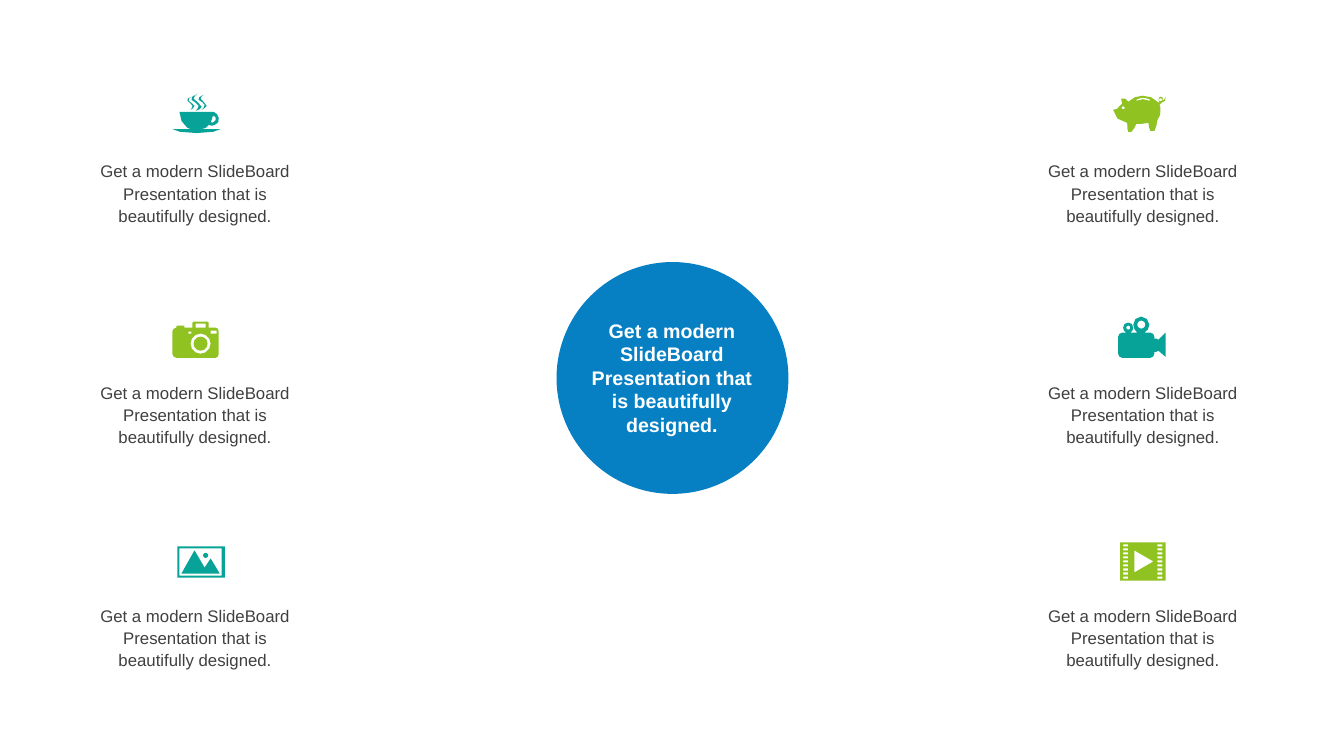
from dataclasses import dataclass
from math import cos, pi, sin

from pptx import Presentation
from pptx.dml.color import RGBColor
from pptx.enum.shapes import MSO_SHAPE as Preset
from pptx.enum.text import MSO_ANCHOR as Anchor, MSO_AUTO_SIZE as AutoSize, PP_ALIGN as Align
from pptx.shapes.base import BaseShape
from pptx.slide import Slide
from pptx.util import Pt

PX = 9144  # EMU per px, 100 px to the inch
COLOURS = {"blue": "0680C3", "teal": "07A398", "green": "90C221",
           "grey": "404040", "white": "FFFFFF"}
MESSAGE = "Get a modern SlideBoard Presentation that is beautifully designed."
CURVE_STEPS = 2
CIRCLE_STEPS = 12
FRAME_FORMAT = {"word_wrap": True, "auto_size": AutoSize.NONE, "vertical_anchor": Anchor.TOP,
                "margin_left": 10 * PX, "margin_right": 10 * PX,
                "margin_top": 5 * PX, "margin_bottom": 5 * PX}
CAPTION_LEFTS = (78, 1018)
CAPTION_TOPS = [153 + 441 * row // 2 for row in range(3)]

Contour = list[tuple[float, float]]


@dataclass(frozen=True)
class Box:
    left: int
    top: int
    width: int
    height: int

    def emu(self) -> list[int]:
        return [side * PX for side in (self.left, self.top, self.width, self.height)]


@dataclass(frozen=True)
class Icon:
    colour: str
    contours: list[Contour]


def rect(left: int, top: int, right: int, bottom: int) -> Contour:
    return [(left, top), (right, top), (right, bottom), (left, bottom)]


def disc(x: int, y: int, radius: float) -> Contour:
    angles = [2 * pi * step / CIRCLE_STEPS for step in range(CIRCLE_STEPS)]
    return [(x + radius * cos(angle), y + radius * sin(angle)) for angle in angles]


def outline(*steps: tuple[int, ...]) -> Contour:
    """Join points (two numbers) and cubic curves (six numbers) into one contour."""
    points: Contour = []
    for step in steps:
        if len(step) == 2:
            points.append(step)
            continue
        x0, y0 = points[-1]
        x1, y1, x2, y2, x3, y3 = step
        for index in range(1, CURVE_STEPS + 1):
            t = index / CURVE_STEPS
            a, b, c, d = (1 - t) ** 3, 3 * t * (1 - t) ** 2, 3 * t * t * (1 - t), t ** 3
            points.append((a * x0 + b * x1 + c * x2 + d * x3,
                           a * y0 + b * y1 + c * y2 + d * y3))
    return points


CUP = Icon("teal", [
    outline((211, 115), (211, 117, 210, 119, 209, 121), (210, 122, 211, 122, 212, 121),
            (214, 120, 214, 119, 214, 117), (214, 116, 213, 115, 211, 115)),
    outline((212, 111), (214, 112, 217, 114, 217, 117), (218, 120, 216, 123, 213, 124),
            (211, 125, 209, 125, 207, 124), (204, 127), (203, 127, 201, 128, 200, 128),
            (219, 128), (218, 130, 208, 132, 195, 132), (182, 132, 172, 130, 171, 128),
            (189, 128), (186, 127), (181, 123, 178, 118, 178, 111)),
    outline((190, 96), (188, 97, 187, 98, 187, 100), (188, 103, 193, 102, 193, 105),
            (192, 107, 191, 108, 189, 109), (190, 107, 191, 107, 191, 105),
            (191, 103, 187, 102, 186, 100), (185, 99, 186, 97, 190, 96)),
    outline((202, 94), (200, 96, 199, 96, 199, 98), (199, 102, 206, 101, 205, 105),
            (204, 107, 203, 107, 200, 109), (202, 107, 203, 106, 203, 104),
            (203, 102, 199, 101, 197, 99), (196, 97, 198, 96, 202, 94)),
    outline((196, 93), (194, 95, 192, 95, 192, 98), (193, 102, 200, 101, 200, 106),
            (199, 108, 198, 109, 194, 110), (196, 108, 197, 107, 197, 105),
            (197, 102, 192, 102, 190, 99), (189, 97, 191, 95, 196, 93)),
])
CAMERA = Icon("green", [
    disc(199, 341, 7), disc(199, 341, 10),
    rect(187, 329, 190, 331), rect(209, 328, 215, 331), rect(194, 321, 204, 325),
    outline((192, 319), (206, 319), (207, 320), (207, 325), (214, 325),
            (216, 325, 217, 327, 217, 329), (217, 351), (217, 353, 216, 355, 214, 355),
            (175, 355), (173, 355, 171, 353, 171, 351), (171, 329),
            (171, 327, 173, 325, 175, 325), (175, 324), (176, 323), (183, 323),
            (183, 325), (191, 325), (191, 320)),
])
LANDSCAPE = Icon("teal", [
    disc(204, 551, 2.5),
    outline((193, 546), (203, 563), (209, 554), (218, 569), (180, 569)),
    rect(178, 544, 220, 571), rect(176, 542, 223, 573),
])
PIGGY = Icon("green", [
    disc(1114, 107, 1.5), disc(1151, 99, 1.5),
    outline((1134, 97), (1131, 97, 1129, 98, 1127, 99), (1127, 100),
            (1131, 98, 1136, 98, 1140, 100), (1141, 99), (1138, 98, 1136, 97, 1134, 97)),
    outline((1133, 95), (1139, 95, 1145, 97, 1148, 101), (1149, 102), (1150, 101),
            (1149, 99), (1149, 97, 1150, 96, 1151, 96), (1153, 96, 1154, 97, 1153, 99),
            (1153, 100), (1154, 99, 1155, 100, 1156, 96), (1157, 100, 1155, 101, 1152, 102),
            (1150, 104), (1151, 107), (1152, 112, 1150, 117, 1148, 119),
            (1148, 124, 1146, 126, 1145, 130), (1141, 130), (1140, 128, 1139, 125, 1139, 122),
            (1135, 123, 1130, 123, 1127, 123), (1126, 126, 1124, 129, 1122, 131), (1119, 131),
            (1118, 130, 1118, 125, 1118, 122), (1113, 120, 1102, 117, 1104, 109),
            (1108, 108), (1110, 106, 1110, 105, 1113, 103), (1112, 98),
            (1116, 96, 1117, 99, 1119, 101), (1122, 97, 1129, 95, 1133, 95)),
])
MOVIE_CAMERA = Icon("teal", [
    disc(1119, 325, 2), disc(1132, 322, 4),
    outline((1132, 314), (1136, 314, 1140, 318, 1140, 322), (1140, 326, 1138, 328, 1135, 330),
            (1141, 330), (1143, 330, 1145, 332, 1145, 334), (1145, 336), (1147, 336),
            (1149, 337), (1156, 330), (1156, 354), (1149, 348), (1147, 349), (1145, 349),
            (1145, 351), (1145, 353, 1143, 355, 1141, 355), (1113, 355),
            (1111, 355, 1109, 353, 1109, 351), (1109, 334), (1109, 332, 1111, 330, 1113, 330),
            (1117, 330), (1115, 329, 1114, 327, 1114, 325), (1114, 322, 1116, 320, 1119, 320),
            (1122, 320, 1124, 322, 1124, 325), (1124, 327, 1123, 329, 1121, 330), (1128, 330),
            (1126, 328, 1124, 326, 1124, 322), (1124, 318, 1127, 314, 1132, 314)),
])
FILM = Icon("green", [
    *(rect(left, top, left + 5, top + 2) for left in (1114, 1148) for top in range(540, 573, 4)),
    [(1125, 546), (1125, 568), (1144, 557)],
    rect(1111, 538, 1156, 576),
])


def rgb(colour: str) -> RGBColor:
    return RGBColor.from_string(COLOURS[colour])


def paint(shape: BaseShape, colour: str) -> None:
    shape.shadow.inherit = False
    shape.fill.solid()
    shape.fill.fore_color.rgb = rgb(colour)
    shape.line.fill.background()


def draw_icon(slide: Slide, icon: Icon) -> None:
    contours = [[(x * PX, y * PX) for x, y in contour] for contour in icon.contours]
    builder = slide.shapes.build_freeform(*contours[0][0])
    for index, contour in enumerate(contours):
        if index:
            builder.move_to(*contour[0])
        builder.add_line_segments(contour[1:], close=True)
    paint(builder.convert_to_shape(), icon.colour)


def write_message(holder: BaseShape, size: int, colour: str, bold: bool, spacing: float) -> None:
    frame = holder.text_frame
    frame.text = MESSAGE
    paragraph = frame.paragraphs[0]
    font = paragraph.runs[0].font
    formats = (
        (frame, FRAME_FORMAT),
        (paragraph, {"alignment": Align.CENTER, "line_spacing": spacing}),
        (font, {"name": "Arial", "size": Pt(size), "bold": bold}),
    )
    for target, values in formats:
        for name, value in values.items():
            setattr(target, name, value)
    font.color.rgb = rgb(colour)


def draw_hub(slide: Slide) -> None:
    hub = slide.shapes.add_shape(Preset.OVAL, *Box(552, 260, 230, 230).emu())
    paint(hub, "blue")
    title = slide.shapes.title
    title.left, title.top, title.width, title.height = Box(576, 311, 181, 128).emu()
    write_message(title, 14, "white", True, 1.0)
    hub.element.addnext(title.element)


def main() -> None:
    deck = Presentation()
    deck.slide_width, deck.slide_height = 1333 * PX, 750 * PX
    slide = deck.slides.add_slide(deck.slide_layouts[5])
    draw_hub(slide)
    icon_columns = ((CUP, CAMERA, LANDSCAPE), (PIGGY, MOVIE_CAMERA, FILM))
    for left, icons in zip(CAPTION_LEFTS, icon_columns):
        for top, icon in zip(CAPTION_TOPS, icons):
            draw_icon(slide, icon)
            caption = slide.shapes.add_textbox(*Box(left, top, 231, 77).emu())
            write_message(caption, 12, "grey", False, 1.1)
    deck.save("out.pptx")


if __name__ == "__main__":
    main()
